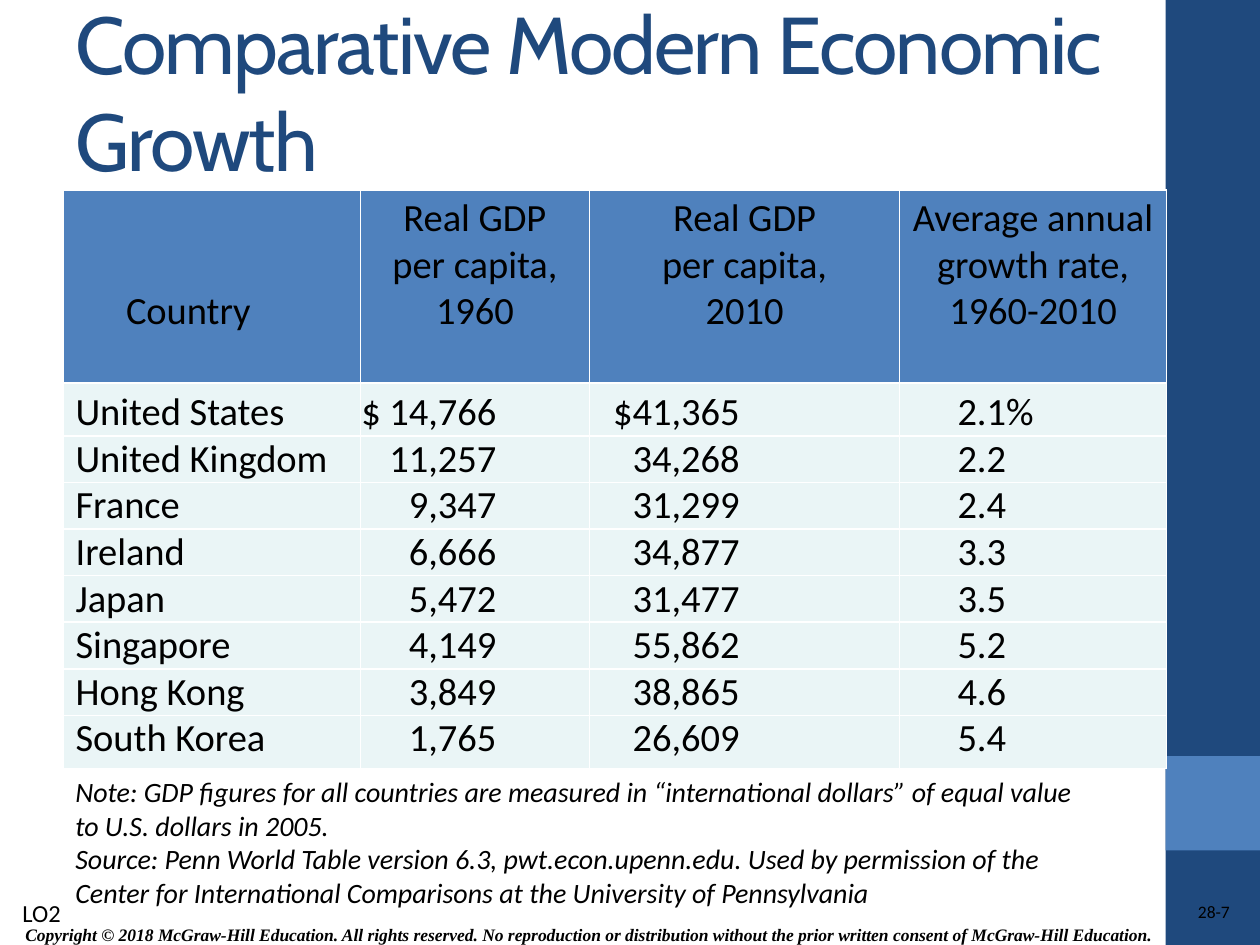
import pptx
import pptx.dml.color
import pptx.enum.shapes
import pptx.enum.text
import pptx.util

COLORS = {"navy": "1F497D", "blue": "4F81BD", "pale": "EAF5F6", "text": "000000"}
ALIGN = pptx.enum.text.PP_ALIGN
ANCHOR = pptx.enum.text.MSO_ANCHOR
CELL = 0.25  # inches per grid step: 40 columns by 30 rows

HEADINGS = [
    ["Country"],
    ["Real GDP", "per capita,", "1960"],
    ["Real GDP", "per capita,", "2010"],
    ["Average annual", "growth rate,", "1960-2010"],
]
COUNTRIES = [
    ("United States", "$ 14,766", "$41,365", "2.1%"),
    ("United Kingdom", "11,257", "34,268", "2.2"),
    ("France", "9,347", "31,299", "2.4"),
    ("Ireland", "6,666", "34,877", "3.3"),
    ("Japan", "5,472", "31,477", "3.5"),
    ("Singapore", "4,149", "55,862", "5.2"),
    ("Hong Kong", "3,849", "38,865", "4.6"),
    ("South Korea", "1,765", "26,609", "5.4"),
]
NOTES = [
    "Note: GDP figures for all countries are measured in “international dollars” of equal value",
    "to U.S. dollars in 2005.",
    "Source: Penn World Table version 6.3, pwt.econ.upenn.edu. Used by permission of the",
    "Center for International Comparisons at the University of Pennsylvania",
]
COPYRIGHT = ("Copyright © 2018 McGraw-Hill Education. All rights reserved. No reproduction or "
             "distribution without the prior written consent of McGraw-Hill Education.")


def grid(steps):
    return pptx.util.Inches(steps * CELL)


class SlideBuilder:
    def __init__(self, slide, font="Calibri"):
        self.slide = slide
        self.font = font

    def paint(self, fill, color):
        fill.solid()
        fill.fore_color.rgb = pptx.dml.color.RGBColor.from_string(COLORS[color])

    def set_lines(self, frame, lines, size, align=ALIGN.LEFT, color="text", font=None,
                  bold=False, italic=False):
        for index, line in enumerate(lines):
            paragraph = frame.paragraphs[0] if index == 0 else frame.add_paragraph()
            paragraph.text = line
            paragraph.alignment = align
            paragraph.font.name = font or self.font
            paragraph.font.size = pptx.util.Pt(size)
            paragraph.font.bold = bold
            paragraph.font.italic = italic
            paragraph.font.color.rgb = pptx.dml.color.RGBColor.from_string(COLORS[color])

    def block(self, box, color):
        shape = self.slide.shapes.add_shape(
            pptx.enum.shapes.MSO_SHAPE.RECTANGLE, *map(grid, box))
        shape.shadow.inherit = False
        self.paint(shape.fill, color)
        shape.line.fill.background()

    def text(self, box, lines, size, anchor=ANCHOR.TOP, inset=True, **style):
        frame = self.slide.shapes.add_textbox(*map(grid, box)).text_frame
        frame.word_wrap = True
        frame.vertical_anchor = anchor
        if not inset:
            frame.margin_left = frame.margin_right = frame.margin_top = frame.margin_bottom = 0
        self.set_lines(frame, lines, size, **style)
        return frame

    def table_cell(self, cell, lines, color, align, anchor, left=0.1, right=0.1, bottom=0.0):
        self.paint(cell.fill, color)
        cell.vertical_anchor = anchor
        cell.margin_left, cell.margin_right = pptx.util.Inches(left), pptx.util.Inches(right)
        cell.margin_top, cell.margin_bottom = 0, pptx.util.Inches(bottom)
        self.set_lines(cell.text_frame, lines, 22, align)

    def growth_table(self, box, widths, heights):
        table = self.slide.shapes.add_table(
            len(heights), len(widths), *map(grid, box)).table
        table.first_row = table.horz_banding = False
        for column, width in zip(table.columns, widths):
            column.width = pptx.util.Inches(width)
        for row, height in zip(table.rows, heights):
            row.height = pptx.util.Inches(height)
        for index, lines in enumerate(HEADINGS):
            align, left = (ALIGN.CENTER, 0.1) if index else (ALIGN.LEFT, 0.5)
            self.table_cell(table.cell(0, index), lines, "blue", align,
                            ANCHOR.BOTTOM, left=left, bottom=0.38)
        # Alignment, left margin and right margin of each column of values
        columns = [(ALIGN.LEFT, 0.1, 0.0), (ALIGN.RIGHT, 0.0, 0.74),
                   (ALIGN.RIGHT, 0.0, 1.27), (ALIGN.LEFT, 0.46, 0.0)]
        for row, values in enumerate(COUNTRIES, 1):
            anchor = ANCHOR.TOP if row == len(COUNTRIES) else ANCHOR.BOTTOM
            for index, (value, (align, left, right)) in enumerate(zip(values, columns)):
                self.table_cell(table.cell(row, index), [value], "pale", align,
                                anchor, left, right)


def main():
    presentation = pptx.Presentation()
    presentation.slide_width, presentation.slide_height = grid(40), grid(30)
    builder = SlideBuilder(presentation.slides.add_slide(presentation.slide_layouts[6]))

    builder.block((37, 0, 3, 30), "navy")
    builder.block((37, 24, 3, 3), "blue")
    title = builder.text((2, 0, 34, 5.76), ["Comparative Modern Economic Growth"], 46,
                         ANCHOR.MIDDLE, color="navy", font="Cabin")
    for run in title.paragraphs[0].runs:
        run.font._element.set("spc", "-100")

    row_height, edge = 0.37, 0.05
    heights = [1.53, row_height + edge] + [row_height] * 6 + [row_height + edge]
    builder.growth_table((2, 6.04, 35.04, 18.36), [2.36, 1.82, 2.46, 2.12], heights)

    builder.text((2, 24.4, 35.04, 4.72), NOTES, 16, italic=True)
    builder.text((0.32, 28.32, 2.12, 1.36), ["LO2"], 14)
    builder.text((31.24, 28.6, 7.8, 0.8), ["28-7"], 10, inset=False, align=ALIGN.RIGHT)
    builder.text((0.24, 29.12, 36.88, 1.12), [COPYRIGHT], 10, ANCHOR.MIDDLE,
                 align=ALIGN.CENTER, font="Times New Roman", bold=True, italic=True)
    presentation.save("out.pptx")


if __name__ == "__main__":
    main()
